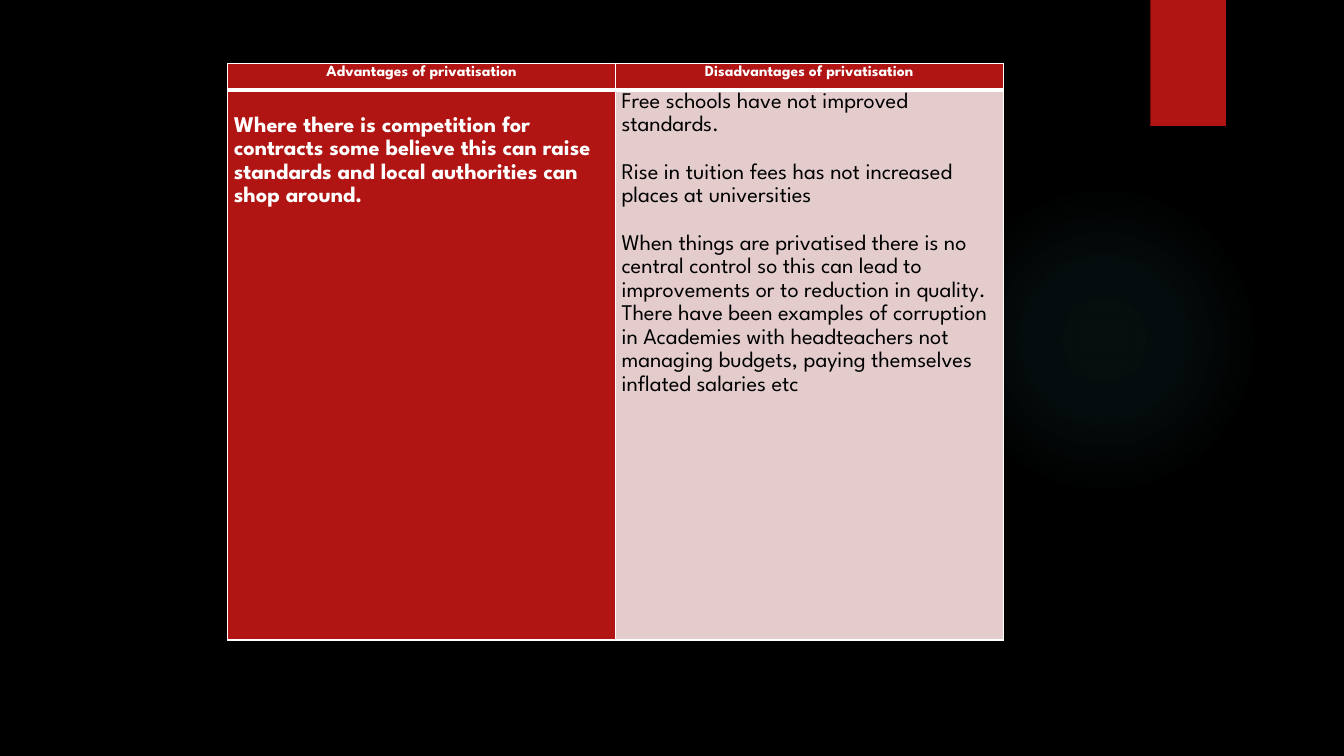
from lxml import etree
from pptx import Presentation
from pptx.dml.color import RGBColor as RGB
from pptx.enum.shapes import MSO_SHAPE as SHAPE
from pptx.enum.text import PP_ALIGN as ALIGN
from pptx.oxml import parse_xml
from pptx.oxml.ns import nsdecls, qn
from pptx.util import Inches, Pt

COLORS = {"black": "000000", "white": "FFFFFF", "red": "B01513",
          "pink": "E4CCCC", "glow": "50B9C1"}
FONT = "League Spartan"
LINE = 0.235

HEADERS = ["Advantages of privatisation", "Disadvantages of privatisation"]
ADVANTAGES = [
    "Where there is competition for contracts some believe this can raise "
    "standards and local authorities can shop around.",
]
DISADVANTAGES = [
    "Free schools have not improved standards.",
    "Rise in tuition fees has not increased places at universities",
    "When things are privatised there is no central control so this can lead to "
    "improvements or to reduction in quality. There have been examples of "
    "corruption in Academies with headteachers not managing budgets, paying "
    "themselves inflated salaries etc",
]


def rgb(name):
    return RGB.from_string(COLORS[name])


def add_plain_shape(s, kind, box):
    sp = s.shapes.add_shape(kind, *map(Inches, box))
    sp.shadow.inherit = False
    sp.line.fill.background()
    return sp


def add_glow(s, box):
    sp = add_plain_shape(s, SHAPE.OVAL, box)
    sp.fill.background()
    stops = "".join(
        f'<a:gs pos="{pos * 1000}"><a:srgbClr val="{COLORS["glow"]}">'
        f'<a:alpha val="{alpha * 1000}"/></a:srgbClr></a:gs>'
        for pos, alpha in [(0, 7), (36, 6), (69, 0)])
    gradient = parse_xml(
        f'<a:gradFill {nsdecls("a")} rotWithShape="1"><a:gsLst>{stops}</a:gsLst>'
        '<a:path path="circle"><a:fillToRect l="50000" t="50000" r="50000" '
        'b="50000"/></a:path></a:gradFill>')
    spPr = sp._element.spPr
    spPr.replace(spPr.find(qn("a:noFill")), gradient)


def add_ribbon(s, box):
    sp = add_plain_shape(s, SHAPE.RECTANGLE, box)
    sp.fill.solid()
    sp.fill.fore_color.rgb = rgb("red")


def set_borders(cell, bottom):
    tcPr = cell._tc.get_or_add_tcPr()
    for i, (side, width) in enumerate(zip("LRTB", (1, 1, 1, bottom))):
        ln = etree.Element(qn(f"a:ln{side}"), w=str(Pt(width)))
        fill = etree.SubElement(ln, qn("a:solidFill"))
        etree.SubElement(fill, qn("a:srgbClr"), val=COLORS["white"])
        tcPr.insert(i, ln)


def fill_cell(cell, texts, fill, color, size, bold, align, top=0, bottom=1):
    margins = {"margin_left": 0.06, "margin_right": 0.06,
               "margin_top": top, "margin_bottom": 0}
    for name, value in margins.items():
        setattr(cell, name, Inches(value))
    cell.fill.solid()
    cell.fill.fore_color.rgb = rgb(fill)
    set_borders(cell, bottom)
    tf = cell.text_frame
    for i, text in enumerate(texts):
        p = tf.paragraphs[0] if i == 0 else tf.add_paragraph()
        p.alignment, p.line_spacing = align, 1.15
        if i:
            p.space_before = Inches(LINE)
        r = p.add_run()
        r.text = text
        for name, value in {"name": FONT, "size": Pt(size), "bold": bold}.items():
            setattr(r.font, name, value)
        r.font.color.rgb = rgb(color)


def add_comparison(s, box):
    x, y, w, h = box
    table = s.shapes.add_table(2, 2, *map(Inches, box)).table
    header = 0.26
    for row, height in zip(table.rows, (header, h - header)):
        row.height = Inches(height)
    for col, title in enumerate(HEADERS):
        table.columns[col].width = Inches(w / 2)
        fill_cell(table.cell(0, col), [title], "red", "white", 11, True,
                  ALIGN.CENTER, bottom=3)
    fill_cell(table.cell(1, 0), ADVANTAGES, "red", "white", 16, True,
              ALIGN.LEFT, top=LINE)
    fill_cell(table.cell(1, 1), DISADVANTAGES, "pink", "black", 16, False,
              ALIGN.LEFT)


def main():
    prs = Presentation()
    W, H = 13.33, 7.5
    prs.slide_width, prs.slide_height = Inches(W), Inches(H)
    s = prs.slides.add_slide(prs.slide_layouts[6])
    s.background.fill.solid()
    s.background.fill.fore_color.rgb = rgb("black")
    add_glow(s, (9.41, 1.83, 3.08, 3.08))
    add_ribbon(s, (11.41, 0, 0.75, H / 6))
    add_comparison(s, (2.26, 0.63, 7.69, 5.72))
    prs.save("out.pptx")


if __name__ == "__main__":
    main()
